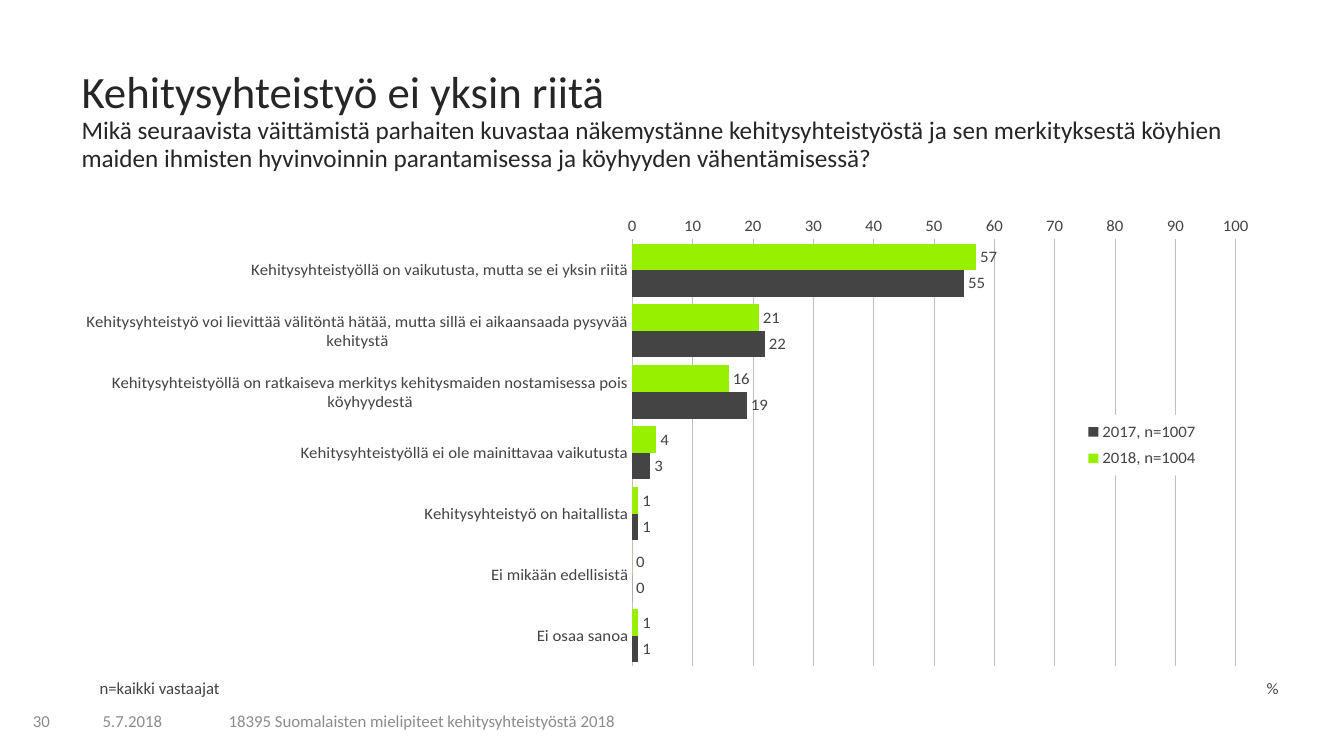
from lxml import etree
from pptx import Presentation
from pptx.chart.data import CategoryChartData
from pptx.dml.color import RGBColor
from pptx.enum.chart import (XL_AXIS_CROSSES, XL_CHART_TYPE, XL_LABEL_POSITION,
                             XL_LEGEND_POSITION, XL_TICK_MARK)
from pptx.enum.text import MSO_ANCHOR, MSO_AUTO_SIZE, PP_ALIGN
from pptx.oxml import parse_xml
from pptx.util import Cm, Pt

NONE = XL_TICK_MARK.NONE
MAX = XL_AXIS_CROSSES.MAXIMUM
BARS = XL_CHART_TYPE.BAR_CLUSTERED
OUT = XL_LABEL_POSITION.OUTSIDE_END
RIGHT = XL_LEGEND_POSITION.RIGHT
TOP, MID = MSO_ANCHOR.TOP, MSO_ANCHOR.MIDDLE
LEFT = PP_ALIGN.LEFT
FIXED = MSO_AUTO_SIZE.NONE

FONT = "Calibri"
HUES = {"title": "262626", "text": "444444", "foot": "8C8C8C",
        "new": "96F000", "old": "444444", "grid": "BFBFBF", "back": "FFFFFF"}

HEAD = [
    ("Kehitysyhteistyö ei yksin riitä", 32),
    ("Mikä seuraavista väittämistä parhaiten kuvastaa näkemystänne "
     "kehitysyhteistyöstä ja sen merkityksestä köyhien maiden ihmisten "
     "hyvinvoinnin parantamisessa ja köyhyyden vähentämisessä?", 18),
]
CLAIMS = [
    "Kehitysyhteistyöllä on vaikutusta, mutta se ei yksin riitä",
    "Kehitysyhteistyö voi lievittää välitöntä hätää, mutta sillä ei "
    "aikaansaada pysyvää kehitystä",
    "Kehitysyhteistyöllä on ratkaiseva merkitys kehitysmaiden nostamisessa "
    "pois köyhyydestä",
    "Kehitysyhteistyöllä ei ole mainittavaa vaikutusta",
    "Kehitysyhteistyö on haitallista",
    "Ei mikään edellisistä",
    "Ei osaa sanoa",
]
YEARS = [
    ("2018, n=1004", (57, 21, 16, 4, 1, 0, 1), "new"),
    ("2017, n=1007", (55, 22, 19, 3, 1, 0, 1), "old"),
]
# text, left, top, width, height (cm), anchor, hue, line spacing
NOTES = [
    ("5.7.2018", 2.34, 17.65, 2.57, 1.02, MID, "foot", 1.0),
    ("18395 Suomalaisten mielipiteet kehitysyhteistyöstä 2018",
     5.51, 17.65, 11.58, 1.02, MID, "foot", 1.0),
    ("30", 0.58, 17.65, 1.12, 1.02, MID, "foot", 1.0),
    ("n=kaikki vastaajat", 2.26, 17.02, 23.32, 0.71, TOP, "text", 0.9),
]
SIDE, WIDE = 1.8, 30.66
CHART = "http://schemas.openxmlformats.org/drawingml/2006/chart"
DRAW = "http://schemas.openxmlformats.org/drawingml/2006/main"


def hue(name):
    return RGBColor.from_string(HUES[name])


def style(font, size, name):
    font.name, font.size, font.bold = FONT, Pt(size), False
    font.color.rgb = hue(name)


def place(part, index, x, y, w=None, h=None, inner=False):
    """Give a chart part a manual layout, in fractions of the chart."""
    for old in part.findall(f"{{{CHART}}}layout"):
        part.remove(old)
    layout = etree.fromstring(f'<c:layout xmlns:c="{CHART}"><c:manualLayout/></c:layout>')
    rules = [("layoutTarget", "inner")] if inner else []
    rules += [("xMode", "edge"), ("yMode", "edge"), ("x", x), ("y", y)]
    if w is not None:
        rules += [("w", w), ("h", h)]
    for tag, val in rules:
        etree.SubElement(layout[0], f"{{{CHART}}}{tag}", val=str(val))
    part.insert(index, parse_xml(etree.tostring(layout)))


def add_title(slide):
    title = slide.shapes.title
    title.left, title.top = Cm(SIDE), Cm(1.63)
    title.width, title.height = Cm(WIDE), Cm(1.73)
    frame = title.text_frame
    frame.word_wrap, frame.auto_size = True, FIXED
    frame.vertical_anchor = TOP
    para = frame.paragraphs[0]
    para.alignment, para.line_spacing = LEFT, 0.9
    for i, (text, size) in enumerate(HEAD):
        if i:
            para.add_line_break()
        run = para.add_run()
        run.text = text
        style(run.font, size, "title")


def add_note(slide, text, x, y, w, h, anchor, name, space):
    frame = slide.shapes.add_textbox(Cm(x), Cm(y), Cm(w), Cm(h)).text_frame
    frame.word_wrap, frame.vertical_anchor = True, anchor
    para = frame.paragraphs[0]
    para.line_spacing = space
    run = para.add_run()
    run.text = text
    style(run.font, 12, name)


def add_bars(slide):
    data = CategoryChartData(number_format="General")
    data.categories = CLAIMS
    for name, vals, _ in YEARS:
        data.add_series(name, vals)
    chart = slide.shapes.add_chart(BARS, Cm(SIDE), Cm(5.46), Cm(WIDE),
                                   Cm(12.27), data).chart
    chart.has_title = False
    style(chart.font, 12, "text")

    plot = chart.plots[0]
    plot.gap_width, plot.overlap, plot.vary_by_categories = 30, 0, False
    place(plot._element.getparent(), 0, 0.461, 0.012, 0.496, 0.92, True)
    for bars, (_, _, name) in zip(plot.series, YEARS):
        bars.invert_if_negative = False
        bars.format.fill.solid()
        bars.format.fill.fore_color.rgb = hue(name)
        tags = bars.data_labels
        tags.show_value, tags.position = True, OUT
        tags.number_format, tags.number_format_is_linked = "#,##0", False
        style(tags.font, 12, "text")

    cat, val = chart.category_axis, chart.value_axis
    for axis in (cat, val):
        axis.major_tick_mark = axis.minor_tick_mark = NONE
        axis.format.line.fill.background()
        style(axis.tick_labels.font, 12, "text")
    cat.reverse_order, cat.crosses = True, MAX
    val.minimum_scale, val.maximum_scale, val.major_unit = 0, 100, 10
    val.has_major_gridlines = True
    grid = val.major_gridlines.format.line
    grid.width, grid.color.rgb = Pt(0.5), hue("grid")
    unit = val.axis_title
    run = unit.text_frame.paragraphs[0].add_run()
    run.text = "%"
    style(run.font, 12, "text")
    place(unit._element, 1, 0.98, 0.95)

    chart.has_legend = True
    key = chart.legend
    key.position, key.include_in_layout = RIGHT, False
    style(key.font, 12, "text")
    place(key._element, 1, 0.83, 0.39, 0.1, 0.13)
    fill = parse_xml(
        f'<c:spPr xmlns:c="{CHART}" xmlns:a="{DRAW}"><a:solidFill>'
        f'<a:srgbClr val="{HUES["back"]}"/></a:solidFill></c:spPr>')
    key._element.find(f"{{{CHART}}}txPr").addprevious(fill)


def main():
    deck = Presentation()
    deck.slide_width, deck.slide_height = Cm(33.87), Cm(19.05)
    slide = deck.slides.add_slide(deck.slide_layouts[5])
    add_title(slide)
    add_bars(slide)
    for note in NOTES:
        add_note(slide, *note)
    deck.save("out.pptx")


if __name__ == "__main__":
    main()
